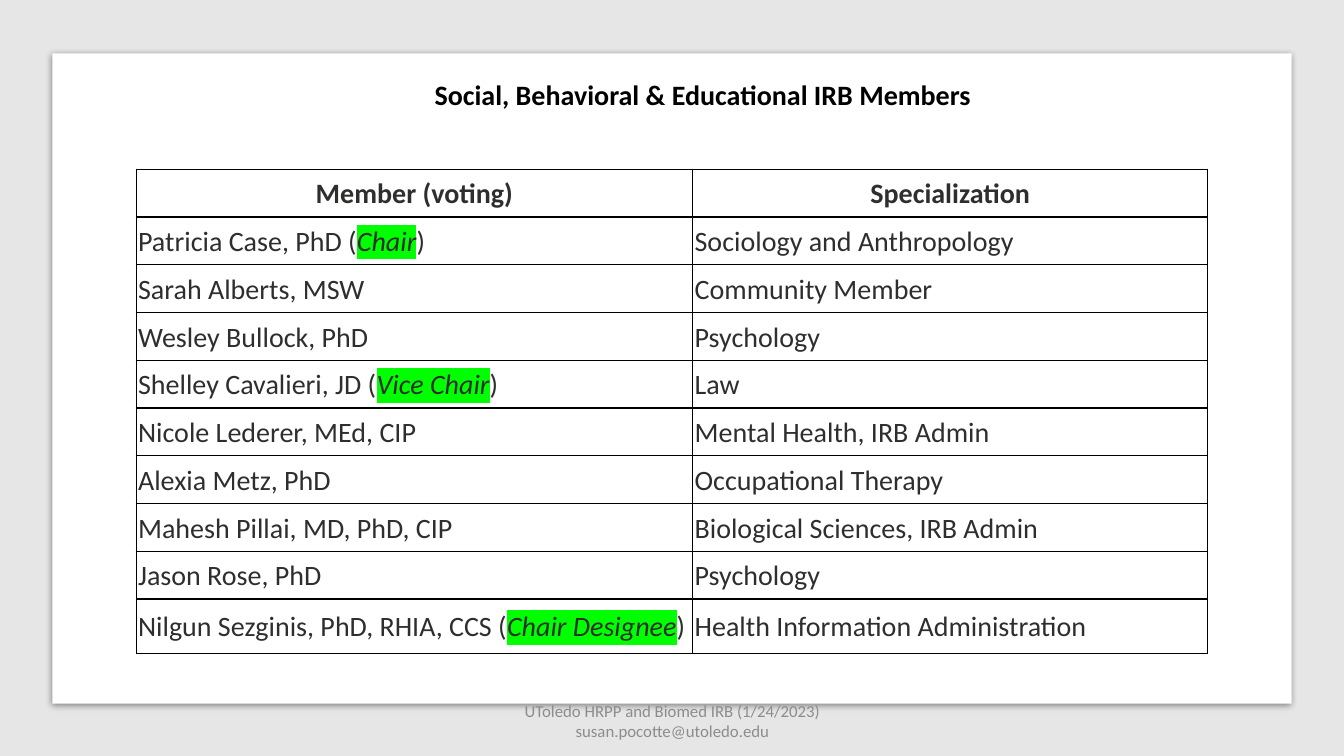
import pptx
import pptx.dml.color
import pptx.enum.shapes
import pptx.enum.text
import pptx.oxml
import pptx.oxml.ns
import pptx.util

Inches = pptx.util.Inches
ALIGN = pptx.enum.text.PP_ALIGN
ANCHOR = pptx.enum.text.MSO_ANCHOR
NAMESPACE = pptx.oxml.ns.nsdecls("a")

WIDTH, HEIGHT = 13.33, 7.5
COLUMNS = [5.52, 5.11]
ROW_HEIGHT, LAST_ROW_HEIGHT = 0.474, 0.54
CELL_MARGIN = 0.02
FONT = "Calibri"
COLORS = {
    "backdrop": "E7E6E6",
    "panel": "FFFFFF",
    "title": "000000",
    "body": "2E2E2D",
    "footer": "8C8C8C",
    "border": "000000",
    "role": "00FF00",
}
TITLE = "Social, Behavioral & Educational IRB Members"
FOOTER = "UToledo HRPP and Biomed IRB (1/24/2023) susan.pocotte@utoledo.edu"
HEADINGS = ["Member (voting)", "Specialization"]
# name, role on the board, specialization
MEMBERS = [
    ("Patricia Case, PhD", "Chair", "Sociology and Anthropology"),
    ("Sarah Alberts, MSW", "", "Community Member"),
    ("Wesley Bullock, PhD", "", "Psychology"),
    ("Shelley Cavalieri, JD", "Vice Chair", "Law"),
    ("Nicole Lederer, MEd, CIP", "", "Mental Health, IRB Admin"),
    ("Alexia Metz, PhD", "", "Occupational Therapy"),
    ("Mahesh Pillai, MD, PhD, CIP", "", "Biological Sciences, IRB Admin"),
    ("Jason Rose, PhD", "", "Psychology"),
    ("Nilgun Sezginis, PhD, RHIA, CCS", "Chair Designee", "Health Information Administration"),
]


def rgb(name):
    return pptx.dml.color.RGBColor.from_string(COLORS[name])


def add_run(paragraph, text, size=20, color="body", bold=False, italic=False, highlight=None):
    run = paragraph.add_run()
    run.text = text
    font = run.font
    font.name, font.size, font.bold, font.italic = FONT, pptx.util.Pt(size), bold, italic
    font.color.rgb = rgb(color)
    if highlight:
        fill = run._r.get_or_add_rPr().find(pptx.oxml.ns.qn("a:solidFill"))
        fill.addnext(pptx.oxml.parse_xml(
            f'<a:highlight {NAMESPACE}><a:srgbClr val="{COLORS[highlight]}"/></a:highlight>'))


def add_rectangle(slide, left, top, width, height, color):
    rectangle = slide.shapes.add_shape(
        pptx.enum.shapes.MSO_SHAPE.RECTANGLE,
        Inches(left), Inches(top), Inches(width), Inches(height))
    rectangle.shadow.inherit = False
    rectangle.fill.solid()
    rectangle.fill.fore_color.rgb = rgb(color)
    rectangle.line.fill.background()
    return rectangle


def add_soft_shadow(shape):
    effects = shape._element.spPr.find(pptx.oxml.ns.qn("a:effectLst"))
    effects.append(pptx.oxml.parse_xml(
        f'<a:outerShdw {NAMESPACE} blurRad="63500" dist="17780" dir="5400000" rotWithShape="0">'
        '<a:srgbClr val="000000"><a:alpha val="43000"/></a:srgbClr></a:outerShdw>'))


def place_title(slide):
    title = slide.shapes.title
    title.left, title.top = Inches(4.21), Inches(0.72)
    title.width, title.height = Inches(5.57), Inches(0.44)
    frame = title.text_frame
    frame.word_wrap = False
    frame.auto_size = pptx.enum.text.MSO_AUTO_SIZE.SHAPE_TO_FIT_TEXT
    frame.vertical_anchor = ANCHOR.TOP
    frame.paragraphs[0].alignment = ALIGN.LEFT
    add_run(frame.paragraphs[0], TITLE, color="title", bold=True)
    slide.shapes._spTree.append(title._element)  # bring in front of the panel


def format_cell(cell, alignment):
    """Clear the fill, draw all four borders and return the paragraph to write in."""
    cell.fill.background()
    cell.vertical_anchor = ANCHOR.MIDDLE
    cell.margin_left = cell.margin_right = Inches(CELL_MARGIN)
    cell.margin_top = cell.margin_bottom = Inches(CELL_MARGIN)
    properties = cell._tc.get_or_add_tcPr()
    for index, side in enumerate("LRTB"):
        properties.insert(index, pptx.oxml.parse_xml(
            f'<a:ln{side} {NAMESPACE} w="12700"><a:solidFill>'
            f'<a:srgbClr val="{COLORS["border"]}"/></a:solidFill></a:ln{side}>'))
    paragraph = cell.text_frame.paragraphs[0]
    paragraph.alignment = alignment
    paragraph.line_spacing = 1.07
    return paragraph


def add_member_table(slide):
    row_count = len(MEMBERS) + 1
    heights = [ROW_HEIGHT] * len(MEMBERS) + [LAST_ROW_HEIGHT]
    table = slide.shapes.add_table(
        row_count, len(COLUMNS), Inches(1.35), Inches(1.68),
        Inches(sum(COLUMNS)), Inches(sum(heights))).table
    table.first_row = table.horz_banding = False
    for column, width in zip(table.columns, COLUMNS):
        column.width = Inches(width)
    for row, height in zip(table.rows, heights):
        row.height = Inches(height)
    for index, heading in enumerate(HEADINGS):
        add_run(format_cell(table.cell(0, index), ALIGN.CENTER), heading, bold=True)
    for index, (name, role, specialization) in enumerate(MEMBERS, start=1):
        paragraph = format_cell(table.cell(index, 0), ALIGN.LEFT)
        add_run(paragraph, f"{name} (" if role else name)
        if role:
            add_run(paragraph, role, italic=True, highlight="role")
            add_run(paragraph, ")")
        add_run(format_cell(table.cell(index, 1), ALIGN.LEFT), specialization)


def add_footer(slide):
    box = slide.shapes.add_textbox(Inches(4.42), Inches(6.95), Inches(4.5), Inches(0.4))
    frame = box.text_frame
    frame.word_wrap = True
    frame.vertical_anchor = ANCHOR.MIDDLE
    frame.paragraphs[0].alignment = ALIGN.CENTER
    add_run(frame.paragraphs[0], FOOTER, size=12, color="footer")


def main():
    presentation = pptx.Presentation()
    presentation.slide_width, presentation.slide_height = Inches(WIDTH), Inches(HEIGHT)
    slide = presentation.slides.add_slide(presentation.slide_layouts.get_by_name("Title Only"))
    add_rectangle(slide, 0, 0, WIDTH, HEIGHT, "backdrop")
    add_soft_shadow(add_rectangle(slide, 0.52, 0.53, 12.29, 6.45, "panel"))
    add_member_table(slide)
    place_title(slide)
    add_footer(slide)
    presentation.save("out.pptx")


if __name__ == "__main__":
    main()
